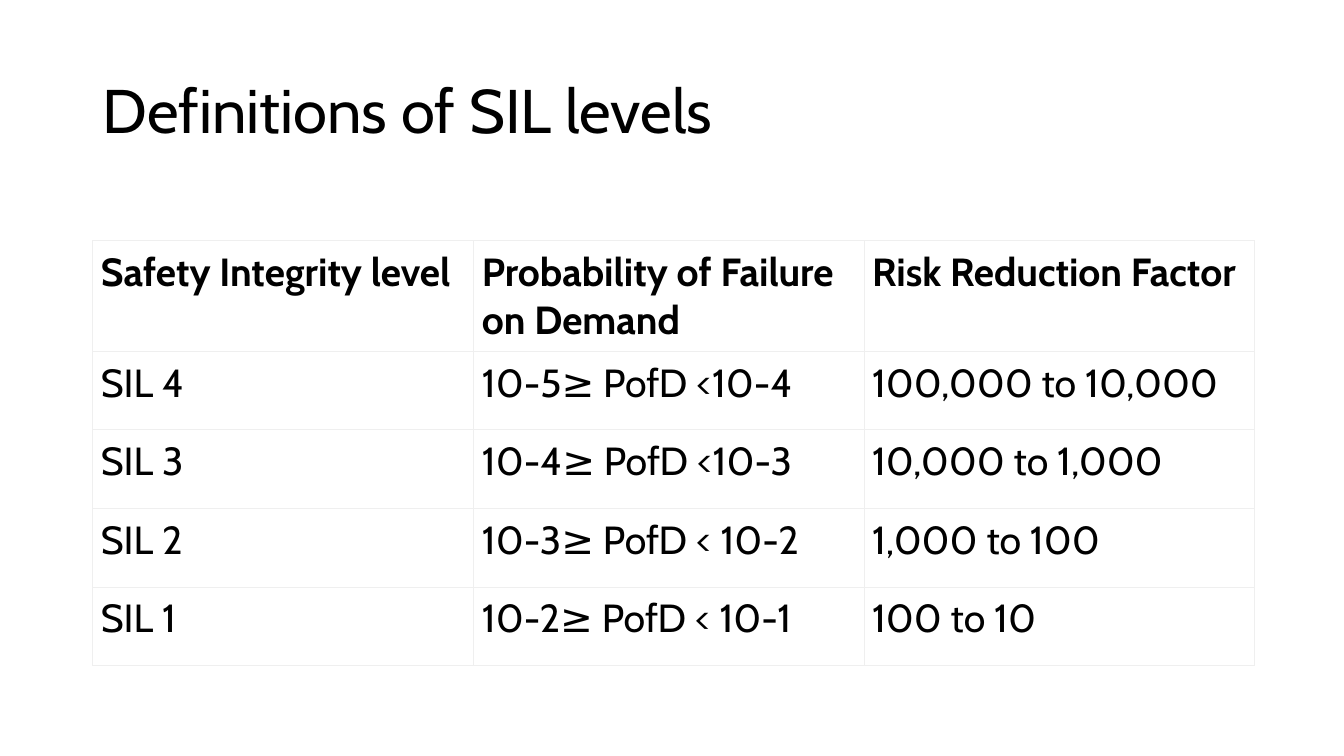
import dataclasses

import pptx
import pptx.dml.color
import pptx.enum.text
import pptx.oxml
import pptx.oxml.ns
import pptx.util

Inches = pptx.util.Inches


@dataclasses.dataclass(frozen=True)
class Theme:
    """Colours, font and type sizes."""
    ink: str = "000000"
    paper: str = "FFFFFF"
    rule: str = "EFEFEF"
    font: str = "Cabin"
    title: int = 44
    body: int = 28
    line: float = 0.75


THEME = Theme()
WIDTHS = (3.78, 3.87, 3.87)
HEIGHTS = (0.87, 0.78, 0.78, 0.78, 0.78)
INSET = 0.08
LEVELS = (
    ("Safety Integrity level", "Probability of Failure on Demand",
     "Risk Reduction Factor"),
    ("SIL 4", "10-5≥ PofD <10-4", "100,000 to 10,000"),
    ("SIL 3", "10-4≥ PofD <10-3", "10,000 to 1,000"),
    ("SIL 2", "10-3≥ PofD < 10-2", "1,000 to 100"),
    ("SIL 1", "10-2≥ PofD < 10-1", "100 to 10"),
)


def style(para, size, bold=False):
    """Set the font of a paragraph."""
    font = para.font
    font.name = THEME.font
    font.size = pptx.util.Pt(size)
    font.bold = bold
    font.color.rgb = pptx.dml.color.RGBColor.from_string(THEME.ink)


def border(cell):
    """Rule all four sides of a cell."""
    props = cell._tc.get_or_add_tcPr()
    space = pptx.oxml.ns.nsdecls("a")
    width = pptx.util.Pt(THEME.line)
    for spot, side in enumerate(("lnL", "lnR", "lnT", "lnB")):
        props.insert(spot, pptx.oxml.parse_xml(
            f'<a:{side} {space} w="{width}"><a:solidFill>'
            f'<a:srgbClr val="{THEME.rule}"/></a:solidFill></a:{side}>'))


def heading(slide, text, left, top, width, height):
    """Place the title, centred vertically in its box."""
    box = slide.shapes.add_textbox(
        Inches(left), Inches(top), Inches(width), Inches(height))
    frame = box.text_frame
    frame.word_wrap = True
    frame.vertical_anchor = pptx.enum.text.MSO_ANCHOR.MIDDLE
    frame.text = text
    para = frame.paragraphs[0]
    para.line_spacing = 0.9
    style(para, THEME.title)


def fill(cell, text, bold):
    """Write and format one table cell."""
    cell.text = text
    cell.margin_left = cell.margin_right = Inches(INSET)
    cell.margin_top = cell.margin_bottom = Inches(INSET)
    cell.fill.solid()
    cell.fill.fore_color.rgb = pptx.dml.color.RGBColor.from_string(THEME.paper)
    border(cell)
    style(cell.text_frame.paragraphs[0], THEME.body, bold)


def grid(slide, rows, left, top):
    """Place the table of levels from its top left corner."""
    table = slide.shapes.add_table(
        len(rows), len(WIDTHS), Inches(left), Inches(top),
        Inches(sum(WIDTHS)), Inches(sum(HEIGHTS))).table
    table.horz_banding = False
    for column, width in zip(table.columns, WIDTHS):
        column.width = Inches(width)
    for row, height in zip(table.rows, HEIGHTS):
        row.height = Inches(height)
    for r, row in enumerate(rows):
        for c, text in enumerate(row):
            fill(table.cell(r, c), text, r == 0)


def main():
    """Build and save the slide."""
    deck = pptx.Presentation()
    deck.slide_width = Inches(13.33)
    deck.slide_height = Inches(7.5)
    slide = deck.slides.add_slide(deck.slide_layouts[6])
    heading(slide, "Definitions of SIL levels", 0.92, 0.4, 11.5, 1.45)
    grid(slide, LEVELS, 0.92, 2.39)
    deck.save("out.pptx")


if __name__ == "__main__":
    main()
